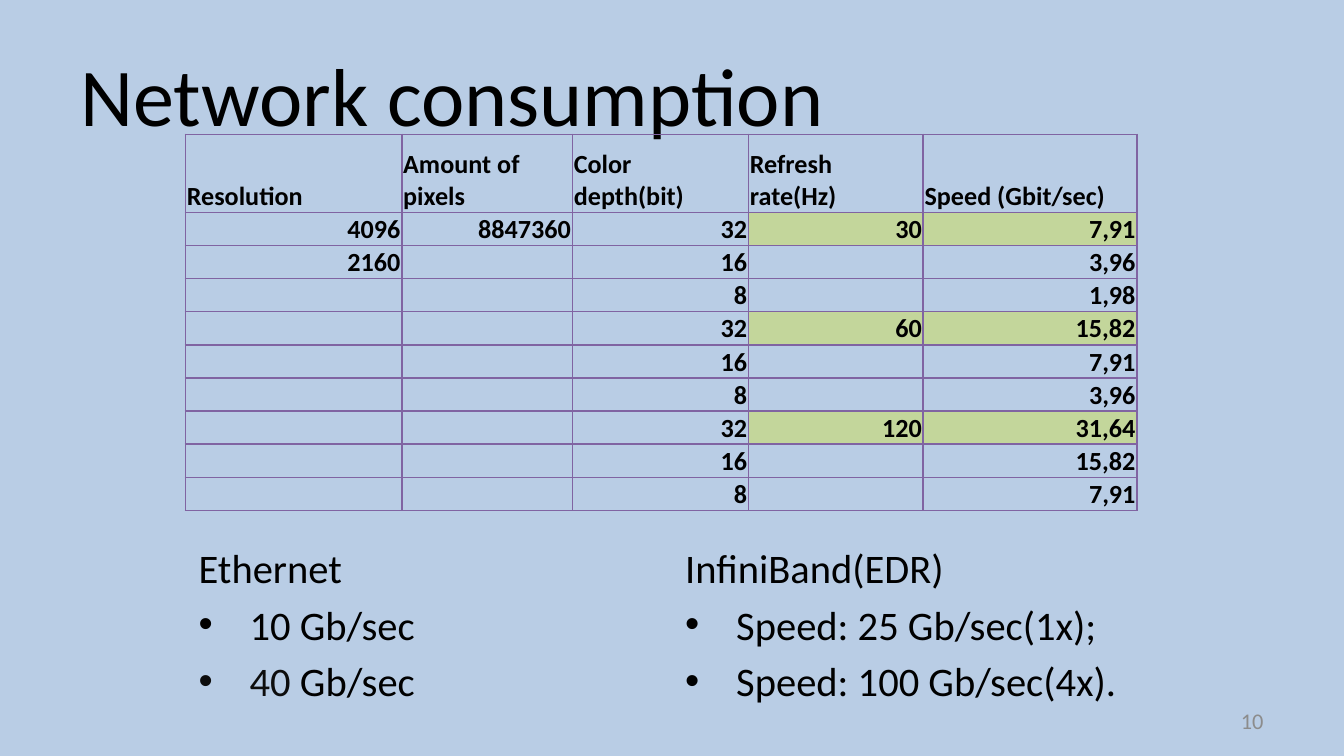
from lxml import etree
from pptx import Presentation
from pptx.dml.color import RGBColor
from pptx.enum.text import MSO_ANCHOR, PP_ALIGN
from pptx.oxml.ns import qn
from pptx.util import Inches, Pt

LEFT, RIGHT = PP_ALIGN.LEFT, PP_ALIGN.RIGHT
TOP, MIDDLE, BOTTOM = MSO_ANCHOR.TOP, MSO_ANCHOR.MIDDLE, MSO_ANCHOR.BOTTOM

FONT, BULLET_FONT = "Calibri", "Arial"
BACKGROUND, BLACK, NEAR_BLACK, GRAY = "B9CDE5", "000000", "0D0D0D", "8C8C8C"
BORDER, HIGHLIGHT = "8064A2", "C3D69B"

HEADER = ["Resolution", "Amount of pixels", "Color depth(bit)",
          "Refresh rate(Hz)", "Speed (Gbit/sec)"]
ROWS = [
    ["4096", "8847360", "32", "30", "7,91"],
    ["2160", "", "16", "", "3,96"],
    ["", "", "8", "", "1,98"],
    ["", "", "32", "60", "15,82"],
    ["", "", "16", "", "7,91"],
    ["", "", "8", "", "3,96"],
    ["", "", "32", "120", "31,64"],
    ["", "", "16", "", "15,82"],
    ["", "", "8", "", "7,91"],
]
COLUMN_WIDTHS = [1.61, 1.27, 1.31, 1.3, 1.59]
TABLE_HEIGHT, HEADER_HEIGHT = 2.8, 0.58
ROW_HEIGHT = (TABLE_HEIGHT - HEADER_HEIGHT) / len(ROWS)


def rgb(color):
    return RGBColor.from_string(color)


def style(p, size, color=BLACK, align=LEFT, bold=False):
    p.alignment = align
    p.font.name = FONT
    p.font.size = Pt(size)
    p.font.bold = bold
    p.font.color.rgb = rgb(color)


def add_text_frame(s, left, top, width, height, anchor=TOP):
    box = s.shapes.add_textbox(Inches(left), Inches(top), Inches(width), Inches(height))
    tf = box.text_frame
    tf.word_wrap = True
    tf.vertical_anchor = anchor
    return tf


def add_line(s, text, at, size, color=BLACK, align=LEFT):
    p = add_text_frame(s, *at, anchor=MIDDLE).paragraphs[0]
    p.text = text
    style(p, size, color, align)


def add_bullet(p):
    pPr = p._p.get_or_add_pPr()
    pPr.set("marL", str(Inches(0.38)))
    pPr.set("indent", str(Inches(-0.38)))
    defaults = pPr.find(qn("a:defRPr"))
    defaults.addprevious(etree.Element(qn("a:buFont"), typeface=BULLET_FONT))
    defaults.addprevious(etree.Element(qn("a:buChar"), char="•"))


def add_network(s, left, name, speeds):
    """Add a network name with its speeds as bullets; a speed is a list of (text, color)."""
    tf = add_text_frame(s, left, 3.99, 3.54, 1.19)
    for i, runs in enumerate([[(name, BLACK)]] + speeds):
        p = tf.add_paragraph() if i else tf.paragraphs[0]
        style(p, 21.7)
        p.space_before = Pt(4.34)
        for text, color in runs:
            r = p.add_run()
            r.text = text
            if color != BLACK:
                r.font.color.rgb = rgb(color)
        if i:
            add_bullet(p)


def set_borders(cell):
    tcPr = cell._tc.get_or_add_tcPr()
    for i, side in enumerate(("lnL", "lnR", "lnT", "lnB")):
        ln = etree.Element(qn("a:" + side), w=str(Pt(1)))
        fill = etree.SubElement(ln, qn("a:solidFill"))
        etree.SubElement(fill, qn("a:srgbClr"), val=BORDER)
        tcPr.insert(i, ln)


def fill_cell(cell, text, align, highlighted):
    cell.margin_left = cell.margin_right = cell.margin_top = Inches(0.01)
    cell.margin_bottom = 0
    cell.vertical_anchor = BOTTOM
    p = cell.text_frame.paragraphs[0]
    p.text = text
    style(p, 14, align=align, bold=True)
    if highlighted:
        cell.fill.solid()
        cell.fill.fore_color.rgb = rgb(HIGHLIGHT)
    else:
        cell.fill.background()
    set_borders(cell)


def add_speed_table(s):
    table = s.shapes.add_table(
        len(ROWS) + 1, len(HEADER), Inches(1.38), Inches(1),
        Inches(sum(COLUMN_WIDTHS)), Inches(TABLE_HEIGHT)).table
    table.horz_banding = False
    for column, width in zip(table.columns, COLUMN_WIDTHS):
        column.width = Inches(width)
    for i, values in enumerate([HEADER] + ROWS):
        table.rows[i].height = Inches(ROW_HEIGHT if i else HEADER_HEIGHT)
        new_rate = i > 0 and values[3] != ""
        for j, text in enumerate(values):
            fill_cell(table.cell(i, j), text, RIGHT if i else LEFT, new_rate and j >= 3)


def main():
    prs = Presentation()
    prs.slide_width = Inches(10)
    prs.slide_height = Inches(10 * 9 / 16)
    s = prs.slides.add_slide(prs.slide_layouts[6])
    s.background.fill.solid()
    s.background.fill.fore_color.rgb = rgb(BACKGROUND)

    add_line(s, "Network consumption", (0.5, 0.23, 9, 0.94), 44)
    add_network(s, 5, "InfiniBand(EDR)", [
        [("Speed: 25 Gb/sec(1x);", BLACK)],
        [("Speed: 100 Gb/sec(4x).", BLACK)],
    ])
    add_line(s, "10", (7.17, 5.21, 2.33, 0.3), 12, GRAY, RIGHT)
    add_speed_table(s)
    add_network(s, 1.38, "Ethernet", [
        [("10 Gb/sec", BLACK)],
        [("40 ", NEAR_BLACK), ("Gb/sec", BLACK)],
    ])
    prs.save("out.pptx")


if __name__ == "__main__":
    main()
